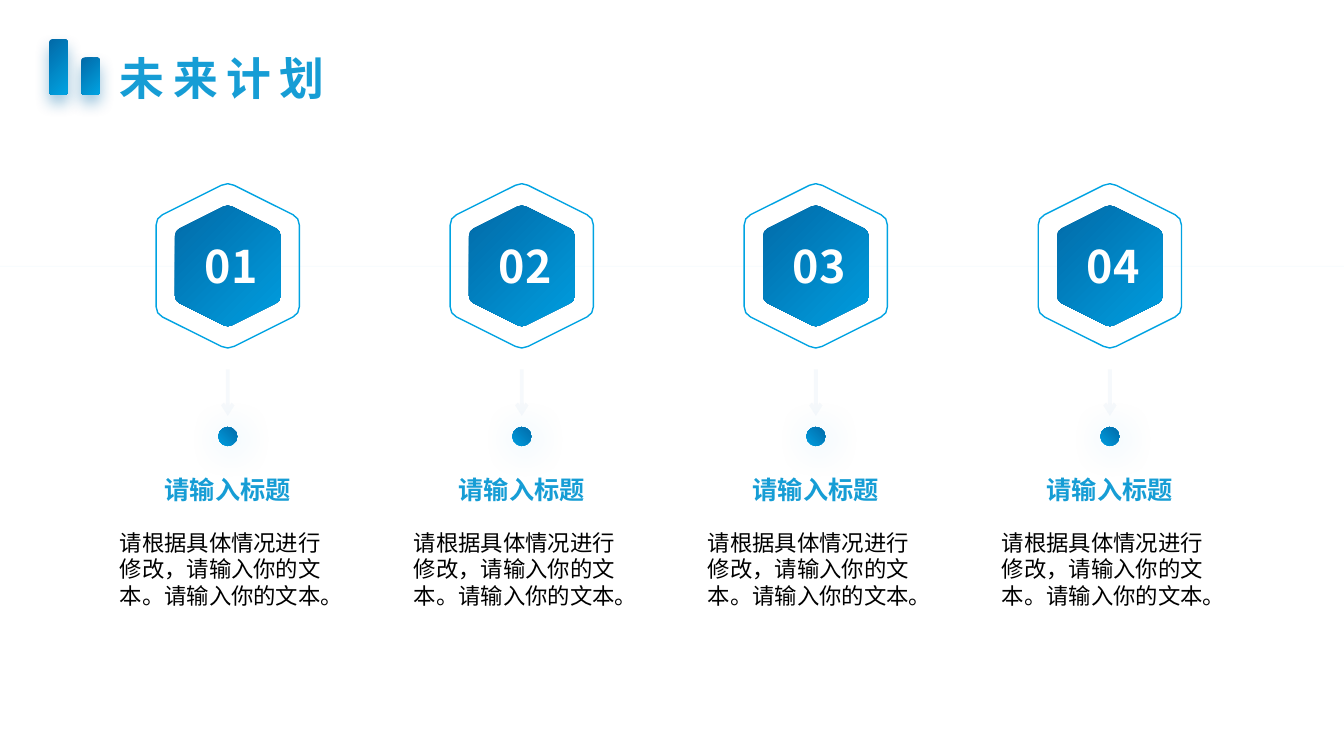
import pptx
import pptx.util
import pptx.dml.color
import pptx.enum.shapes
import pptx.enum.text
import pptx.oxml.ns
import lxml.etree

Cm, Pt = pptx.util.Cm, pptx.util.Pt
SHAPE = pptx.enum.shapes.MSO_SHAPE
FONT = "Noto Sans CJK SC"
COLOURS = {
    "deep": "026AA8", "bright": "009EDF", "sky": "00A3E2", "arrow": "2E75B6",
    "heading": "169DD5", "body": "000000", "white": "FFFFFF",
}
BODY = "请根据具体情况进行修改，请输入你的文本。请输入你的文本。"


def rgb(name):
    """Return the named colour."""
    return pptx.dml.color.RGBColor.from_string(COLOURS[name])


def add_xml(parent, tag, **attributes):
    """Append a drawing element to the parent and return it."""
    child = lxml.etree.SubElement(parent, pptx.oxml.ns.qn(tag))
    for key, value in attributes.items():
        child.set(key, str(value))
    return child


def paint_gradient(shape, start, end, angle):
    """Fill a shape with a two-colour gradient and remove its outline."""
    shape.shadow.inherit = False
    shape.line.fill.background()
    shape.fill.gradient()
    shape.fill.gradient_angle = angle
    for stop, name, position in zip(shape.fill.gradient_stops, (start, end), (0, 1)):
        stop.color.rgb = rgb(name)
        stop.position = position


def cast_shadow(shape, colour, opacity, blur, distance, angle):
    """Give a shape a soft outer shadow."""
    effects = shape._element.spPr.find(pptx.oxml.ns.qn("a:effectLst"))
    shadow = add_xml(effects, "a:outerShdw", blurRad=Pt(blur), dist=Pt(distance),
                     dir=angle * 60000, algn="ctr", rotWithShape=0)
    tint = add_xml(shadow, "a:srgbClr", val=COLOURS[colour])
    add_xml(tint, "a:alpha", val=opacity * 1000)


def add_faint_line(page, start, end, colour, width, arrow=False):
    """Draw a nearly transparent straight line, with an optional arrowhead."""
    line = page.shapes.add_connector(pptx.enum.shapes.MSO_CONNECTOR.STRAIGHT, *start, *end)
    line.line.color.rgb = rgb(colour)
    line.line.width = Pt(width)
    outline = line.line._get_or_add_ln()
    tint = outline.find(".//" + pptx.oxml.ns.qn("a:srgbClr"))
    add_xml(tint, "a:alpha", val=4000)
    if arrow:
        add_xml(outline, "a:tailEnd", type="arrow")
    add_xml(line._element.spPr, "a:effectLst")


def format_text(box, text, size, colour, bold=True, wrap=False, spacing=0, inset=3.6):
    """Set and style the single paragraph of a text box."""
    frame = box.text_frame
    frame.text = text
    frame.word_wrap = wrap
    frame.auto_size = pptx.enum.text.MSO_AUTO_SIZE.SHAPE_TO_FIT_TEXT
    frame.vertical_anchor = pptx.enum.text.MSO_ANCHOR.TOP
    frame.margin_top = Pt(inset)
    para = frame.paragraphs[0]
    para.alignment = pptx.enum.text.PP_ALIGN.LEFT
    para.line_spacing = Pt(round(size * 1.18))
    span = para.runs[0]
    span.font.size = Pt(size)
    span.font.bold = bold
    span.font.color.rgb = rgb(colour)
    span.font.name = FONT
    properties = span.font._element
    add_xml(properties, "a:ea", typeface=FONT)
    if spacing:
        properties.set("spc", str(spacing * 100))


def add_text(page, left, top, width, height, *args, **kwargs):
    """Add a formatted text box."""
    format_text(page.shapes.add_textbox(left, top, width, height), *args, **kwargs)


def add_hexagon(page, centre, middle, width, height, cut):
    """Build an upright hexagon with softened corners."""
    half, rise = width // 2, height // 2
    shoulder = rise - half // 2
    corners = [(0, -rise), (half, -shoulder), (half, shoulder),
               (0, rise), (-half, shoulder), (-half, -shoulder)]
    points = []
    for index, (x, y) in enumerate(corners):
        ends = []
        for near in (corners[index - 1], corners[(index + 1) % 6]):
            run, drop = near[0] - x, near[1] - y
            share = cut / (run ** 2 + drop ** 2) ** 0.5
            ends.append((x + run * share, y + drop * share))
        (ax, ay), (bx, by) = ends
        bend = ((ax + 2 * x + bx) / 4, (ay + 2 * y + by) / 4)
        points += [(round(centre + px), round(middle + py))
                   for px, py in (ends[0], bend, ends[1])]
    builder = page.shapes.build_freeform(*points[0])
    builder.add_line_segments(points[1:], close=True)
    return builder.convert_to_shape()


def add_heading(page, left, top):
    """Place the title and its two gradient bars."""
    title = page.shapes.title
    format_text(title, "未来计划", 32, "heading", spacing=6, inset=5)
    title.left, title.top = left + Cm(1.53), top + Cm(0.12)
    title.width, title.height = Cm(5.89), Cm(1.63)
    for offset, height in ((Cm(0), Cm(1.4)), (Cm(0.81), Cm(0.94))):
        bar = page.shapes.add_shape(SHAPE.ROUNDED_RECTANGLE, left + offset,
                                    top + Cm(1.4) - height, Cm(0.47), height)
        paint_gradient(bar, "deep", "sky", 315)
        cast_shadow(bar, "deep", 40, 11, 6, 90)


def add_plan(page, left, top, width, number):
    """Place one plan column: numbered hexagon, arrow, dot, heading and text."""
    centre, middle = left + width // 2, top + Cm(2.12)
    badge = add_hexagon(page, centre, middle, Cm(2.66), Cm(3.1), Cm(0.13))
    paint_gradient(badge, "deep", "bright", 315)
    ring = add_hexagon(page, centre, middle, Cm(3.61), Cm(4.22), Cm(0.18))
    ring.shadow.inherit = False
    ring.fill.background()
    ring.line.color.rgb = rgb("sky")
    ring.line.width = Pt(1)
    add_faint_line(page, (centre, top + Cm(4.73)), (centre, top + Cm(5.9)),
                   "arrow", 2.75, arrow=True)
    dot = page.shapes.add_shape(SHAPE.OVAL, centre - Cm(0.24), top + Cm(6.18),
                                Cm(0.48), Cm(0.48))
    paint_gradient(dot, "bright", "deep", 45)
    cast_shadow(dot, "sky", 23, 27, 3, 45)
    add_text(page, left + Cm(2.14), top + Cm(1.43), Cm(1.9), Cm(1.63),
             f"{number:02d}", 32, "white", inset=0.4)
    add_text(page, left + Cm(1.13), top + Cm(7.28), Cm(3.81), Cm(1.02),
             "请输入标题", 18, "heading")
    add_text(page, left, top + Cm(8.63), width, Cm(2.31),
             BODY, 16, "body", bold=False, wrap=True)


def main():
    """Build the future plan slide and save the deck."""
    deck = pptx.Presentation()
    deck.slide_width, deck.slide_height = Cm(33.87), Cm(19.05)
    page = deck.slides.add_slide(deck.slide_layouts[5])
    add_faint_line(page, (0, Cm(6.71)), (deck.slide_width, Cm(6.71)), "sky", 0.5)
    add_heading(page, Cm(1.24), Cm(0.99))
    for index in range(4):
        add_plan(page, Cm(2.77 + 7.41 * index), Cm(4.58), Cm(5.94), index + 1)
    deck.save("out.pptx")


if __name__ == "__main__":
    main()
